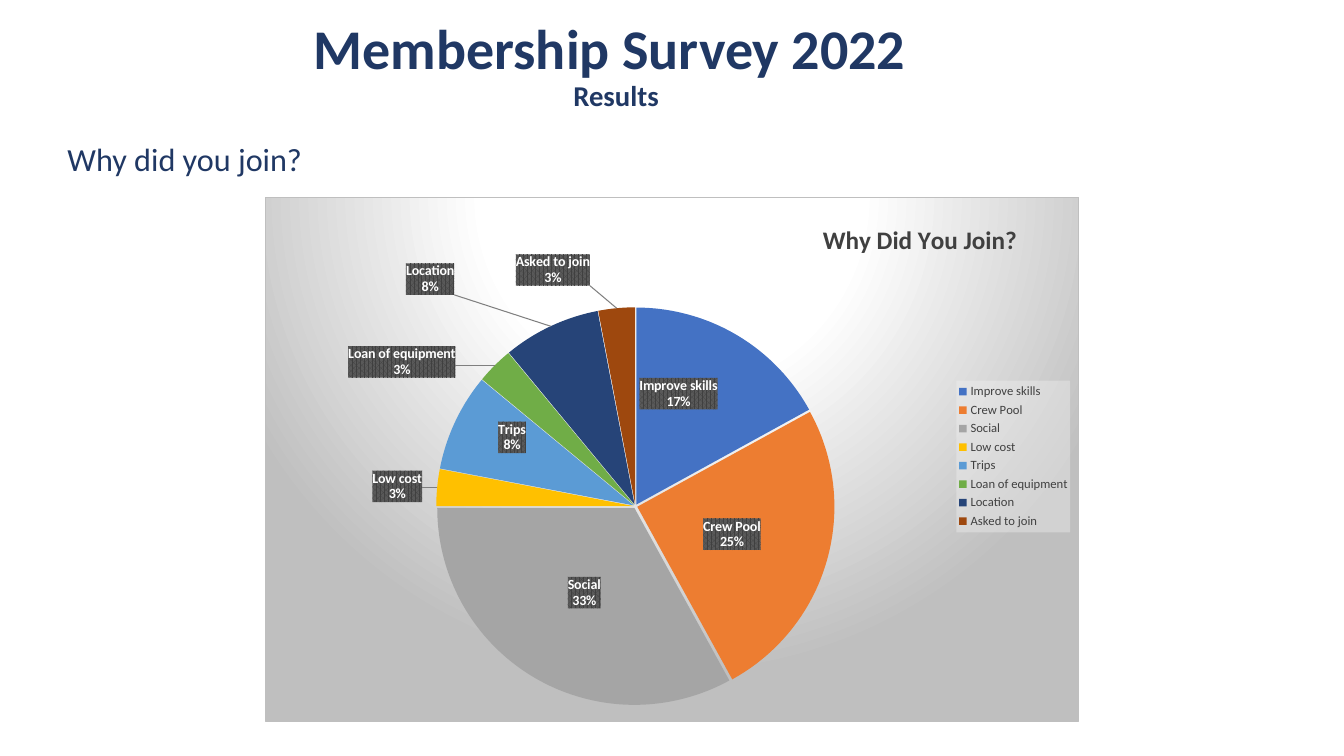
"""Build the membership survey results slide."""
from copy import deepcopy
from dataclasses import dataclass

from pptx import Presentation
from pptx.chart.data import CategoryChartData
from pptx.dml.color import RGBColor
from pptx.enum.chart import XL_CHART_TYPE, XL_LABEL_POSITION, XL_LEGEND_POSITION
from pptx.enum.text import MSO_ANCHOR, PP_ALIGN
from pptx.oxml import parse_xml
from pptx.oxml.ns import nsdecls
from pptx.util import Inches, Pt


@dataclass(frozen=True)
class Theme:
    """Colours, font and type sizes."""
    font: str = "Calibri"
    navy: str = "203864"
    black: str = "000000"
    white: str = "FFFFFF"
    silver: str = "BFBFBF"
    dark: str = "404040"
    label_back: str = "595959"
    leader: str = "7F7F7F"
    legend_back: str = "F2F2F2"
    title: float = 40
    subtitle: float = 20.5
    question: float = 23
    chart_title: float = 18
    label: float = 10
    legend: float = 9


THEME = Theme()

REASONS = [
    ("Improve skills", 17, "4472C4", (-0.01, -0.05)),
    ("Crew Pool", 25, "ED7D31", None),
    ("Social", 33, "A5A5A5", None),
    ("Low cost", 3, "FFC000", (-0.17, -0.02)),
    ("Trips", 8, "5B9BD5", (-0.04, -0.05)),
    ("Loan of equipment", 3, "70AD47", (-0.2, -0.14)),
    ("Location", 8, "264478", (-0.2, -0.26)),
    ("Asked to join", 3, "9E480E", (-0.09, -0.26)),
]


def style_font(font, size, color, bold=False):
    """Set the face, size, colour and weight of a font."""
    font.name, font.size, font.bold = THEME.font, Pt(size), bold
    font.color.rgb = RGBColor.from_string(color)


def add_run(p, text, size, color, bold=False):
    """Add a styled run to a paragraph."""
    r = p.add_run()
    r.text = text
    style_font(r.font, size, color, bold)


def chart_xml(tag, body="", attrs=""):
    """Make a chart element from its tag, content and attributes."""
    return parse_xml(f'<c:{tag} {nsdecls("c", "a")} {attrs}>{body}</c:{tag}>')


def layout_xml(x, y, w=None, h=None, inner=False, offset=False):
    """Make a manual layout in fractions of the chart."""
    body = '<c:layoutTarget val="inner"/>' if inner else ""
    if not offset:
        body += '<c:xMode val="edge"/><c:yMode val="edge"/>'
    sizes = {"x": x, "y": y, "w": w, "h": h}
    body += "".join(f'<c:{k} val="{v}"/>' for k, v in sizes.items() if v is not None)
    return chart_xml("layout", f"<c:manualLayout>{body}</c:manualLayout>")


def set_layout(parent, index, layout):
    """Replace the layout of a chart part."""
    for old in parent.xpath("./c:layout"):
        parent.remove(old)
    parent.insert(index, layout)


def add_title(s):
    """Fill and place the title placeholder."""
    sp = s.shapes.title
    sp.left, sp.top, sp.width, sp.height = (Inches(v) for v in (2.39, 0.12, 7.44, 1.08))
    tf = sp.text_frame
    tf.word_wrap, tf.vertical_anchor = True, MSO_ANCHOR.MIDDLE
    p = tf.paragraphs[0]
    p.alignment, p.line_spacing = PP_ALIGN.CENTER, 0.9
    add_run(p, "Membership Survey 2022 ", THEME.title, THEME.navy, True)
    p.add_line_break()
    add_run(p, "Results", THEME.subtitle, THEME.navy, True)


def add_question(s):
    """Add the survey question above the chart."""
    sp = s.shapes.add_textbox(Inches(0.57), Inches(1.33), Inches(12.09), Inches(0.49))
    tf = sp.text_frame
    tf.word_wrap = True
    p = tf.paragraphs[0]
    p.space_after = Pt(12)
    add_run(p, "Why did you join?", THEME.question, THEME.navy)


def fill_background(chart):
    """Give the chart area its radial gradient and border."""
    stops = [(0, THEME.white), (39, THEME.white), (100, THEME.silver)]
    gs = "".join(f'<a:gs pos="{pos * 1000}"><a:srgbClr val="{c}"/></a:gs>' for pos, c in stops)
    chart.element.xpath("./c:chart")[0].addnext(chart_xml("spPr", (
        f'<a:gradFill><a:gsLst>{gs}</a:gsLst><a:path path="circle">'
        '<a:fillToRect l="50000" t="-80000" r="50000" b="180000"/></a:path></a:gradFill>'
        f'<a:ln w="{Pt(0.75)}"><a:solidFill><a:srgbClr val="{THEME.silver}"/></a:solidFill></a:ln>')))


def add_labels(chart):
    """Label the slices and move the labels that have an offset."""
    labels = chart.plots[0].series[0].data_labels
    labels.show_value = False
    labels.show_category_name = labels.show_percentage = True
    labels.position = XL_LABEL_POSITION.CENTER
    style_font(labels.font, THEME.label, THEME.white, True)
    d = chart.element.xpath(".//c:ser/c:dLbls")[0]
    d.xpath("./c:txPr")[0].addprevious(chart_xml("spPr", (
        f'<a:pattFill prst="pct75"><a:fgClr><a:srgbClr val="{THEME.dark}"/></a:fgClr>'
        f'<a:bgClr><a:srgbClr val="{THEME.label_back}"/></a:bgClr></a:pattFill>')))
    d.xpath("./c:showBubbleSize")[0].addnext(chart_xml("separator", "\n"))
    shared = [e for e in d if not e.tag.endswith(("}showLeaderLines", "}leaderLines"))]
    moved = [(i, row[3]) for i, row in enumerate(REASONS) if row[3]]
    for place, (i, offset) in enumerate(moved):
        label = chart_xml("dLbl", f'<c:idx val="{i}"/>')
        label.append(layout_xml(*offset, offset=True))
        label.extend([deepcopy(e) for e in shared])
        d.insert(place, label)
    d.xpath("./c:showLeaderLines")[0].addnext(chart_xml("leaderLines", (
        f'<c:spPr><a:ln w="{Pt(0.75)}"><a:solidFill><a:srgbClr val="{THEME.leader}"/>'
        '</a:solidFill></a:ln></c:spPr>')))


def add_chart_title(chart):
    """Add the chart title at the upper right."""
    chart.has_title = True
    p = chart.chart_title.text_frame.paragraphs[0]
    add_run(p, "Why Did You Join?", THEME.chart_title, THEME.dark, True)
    set_layout(chart.element.xpath("./c:chart/c:title")[0], 1, layout_xml(0.68, 0.04))


def add_legend(chart):
    """Add the legend on a translucent panel."""
    chart.has_legend = True
    chart.legend.position = XL_LEGEND_POSITION.RIGHT
    chart.legend.include_in_layout = False
    style_font(chart.legend.font, THEME.legend, THEME.dark)
    legend = chart.element.xpath(".//c:legend")[0]
    set_layout(legend, 1, layout_xml(0.85, 0.35, 0.14, 0.29))
    legend.xpath("./c:txPr")[0].addprevious(chart_xml("spPr", (
        f'<a:solidFill><a:srgbClr val="{THEME.legend_back}"><a:alpha val="39000"/>'
        '</a:srgbClr></a:solidFill>')))


def add_reasons_chart(s):
    """Add the pie chart of reasons for joining."""
    data = CategoryChartData()
    data.categories = [row[0] for row in REASONS]
    data.add_series("Series 1", [row[1] for row in REASONS])
    chart = s.shapes.add_chart(XL_CHART_TYPE.PIE, Inches(2.63), Inches(1.95),
                               Inches(8.07), Inches(5.21), data).chart
    style_font(chart.font, THEME.label, THEME.black)
    fill_background(chart)
    plot = chart.plots[0]
    plot.vary_by_categories = True
    chart.element.xpath(".//c:ser/c:tx")[0].addnext(chart_xml("explosion", attrs='val="1"'))
    for i, row in enumerate(REASONS):
        fill = plot.series[0].points[i].format.fill
        fill.solid()
        fill.fore_color.rgb = RGBColor.from_string(row[2])
    add_labels(chart)
    add_chart_title(chart)
    add_legend(chart)
    set_layout(chart.element.xpath(".//c:plotArea")[0], 0,
               layout_xml(0.21, 0.21, 0.49, 0.76, inner=True))


def main():
    """Build and save the slide."""
    prs = Presentation()
    prs.slide_width, prs.slide_height = Inches(13.33), Inches(7.5)
    s = prs.slides.add_slide(prs.slide_layouts[5])
    add_title(s)
    add_question(s)
    add_reasons_chart(s)
    prs.save("out.pptx")


if __name__ == "__main__":
    main()
